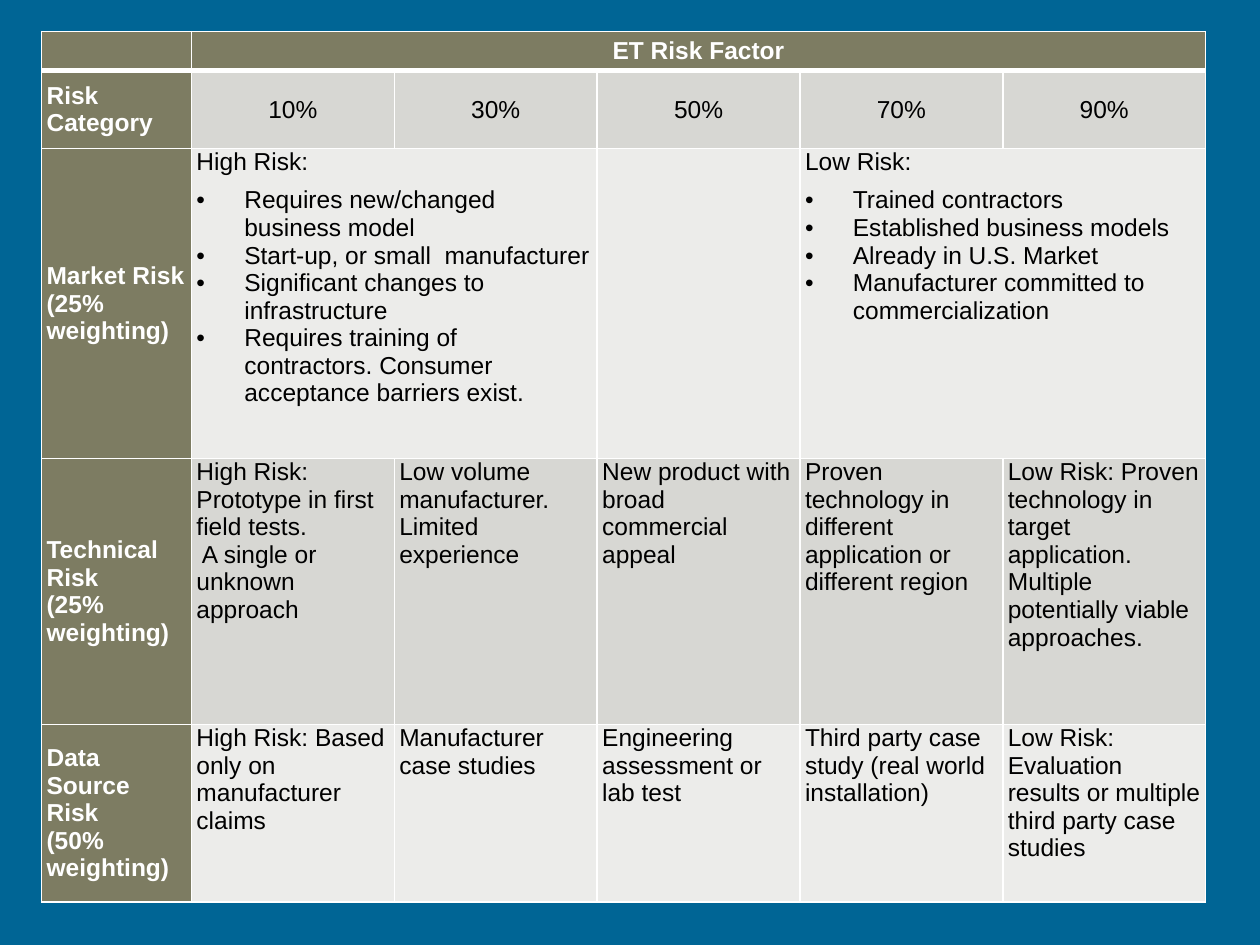
"""Build a slide with a table of emerging technology risk factors."""
from lxml.etree import SubElement
from pptx import Presentation
from pptx.dml.color import RGBColor
from pptx.enum.text import MSO_ANCHOR as Anchor, PP_ALIGN as Align
from pptx.oxml.ns import qn
from pptx.util import Inches, Pt

COLORS = {"background": "006595", "header": "7D7C62", "dark band": "D7D7D3",
          "light band": "ECECEA", "white": "FFFFFF", "black": "000000"}
COLUMN_WIDTHS = [1.19] + [1.61] * 5
ROW_HEIGHTS = [0.31, 0.62, 2.46, 2.11, 1.41]
MERGES = [(0, 1, 5), (2, 1, 2), (2, 4, 5)]
MARGINS = {"margin_left": Inches(0.04), "margin_right": Inches(0.04),
           "margin_top": 0, "margin_bottom": 0}
BULLET = "• "

ROWS = [
    ["", "ET Risk Factor", "", "", "", ""],
    ["Risk Category", "10%", "30%", "50%", "70%", "90%"],
    ["Market Risk\n(25% weighting)",
     "High Risk:\n• Requires new/changed business model\n"
     "• Start-up, or small  manufacturer\n"
     "• Significant changes to infrastructure\n"
     "• Requires training of contractors. Consumer acceptance barriers exist.",
     "", "",
     "Low Risk:\n• Trained contractors\n• Established business models\n"
     "• Already in U.S. Market\n• Manufacturer committed to commercialization",
     ""],
    ["Technical Risk\n(25% weighting)",
     "High Risk: Prototype in first field tests.\n A single or unknown approach",
     "Low volume manufacturer.\nLimited experience",
     "New product with broad commercial appeal",
     "Proven technology in different application or different region",
     "Low Risk: Proven technology in target application. "
     "Multiple potentially viable approaches."],
    ["Data Source Risk\n(50% weighting)",
     "High Risk: Based only on manufacturer claims",
     "Manufacturer case studies",
     "Engineering assessment or lab test",
     "Third party case study (real world installation)",
     "Low Risk: Evaluation results or multiple third party case studies"],
]


def add_borders(cell, bottom_width):
    properties = cell._tc.get_or_add_tcPr()
    for side, width in {"L": 1, "R": 1, "T": 1, "B": bottom_width}.items():
        line = SubElement(properties, qn(f"a:ln{side}"), w=str(Pt(width)))
        fill = SubElement(line, qn("a:solidFill"))
        SubElement(fill, qn("a:srgbClr"), val=COLORS["white"])


def add_bullet(paragraph):
    properties = paragraph._p.get_or_add_pPr()
    properties.set("marL", str(Inches(0.38)))
    properties.set("indent", str(-Inches(0.38)))
    SubElement(properties, qn("a:buFont"), typeface="Arial")
    SubElement(properties, qn("a:buChar"), char=BULLET.strip())


presentation = Presentation()
presentation.slide_width, presentation.slide_height = Inches(10), Inches(7.5)
slide = presentation.slides.add_slide(presentation.slide_layouts[6])
slide.background.fill.solid()
slide.background.fill.fore_color.rgb = RGBColor.from_string(COLORS["background"])

table = slide.shapes.add_table(
    len(ROW_HEIGHTS), len(COLUMN_WIDTHS), Inches(0.33), Inches(0.25),
    Inches(sum(COLUMN_WIDTHS)), Inches(sum(ROW_HEIGHTS))).table
for column, width in zip(table.columns, COLUMN_WIDTHS):
    column.width = Inches(width)
for row, height in zip(table.rows, ROW_HEIGHTS):
    row.height = Inches(height)
for row_index, first, last in MERGES:
    table.cell(row_index, first).merge(table.cell(row_index, last))

for row_index, row_texts in enumerate(ROWS):
    band = "dark band" if row_index % 2 else "light band"
    for column_index, text in enumerate(row_texts):
        cell = table.cell(row_index, column_index)
        is_header = row_index == 0 or column_index == 0
        is_centered = row_index < 2 and column_index > 0
        add_borders(cell, 3 if row_index == 0 else 1)
        cell.fill.solid()
        cell.fill.fore_color.rgb = RGBColor.from_string(
            COLORS["header" if is_header else band])
        for name, value in MARGINS.items():
            setattr(cell, name, value)
        cell.vertical_anchor = Anchor.MIDDLE if is_header or is_centered else Anchor.TOP
        if not text:
            continue
        font_format = {"name": "Arial", "size": Pt(14), "bold": is_header}
        font_color = COLORS["white" if is_header else "black"]
        for line_index, line in enumerate(text.split("\n")):
            frame = cell.text_frame
            paragraph = frame.add_paragraph() if line_index else frame.paragraphs[0]
            paragraph.alignment = Align.CENTER if is_centered else Align.LEFT
            if line.startswith(BULLET):
                add_bullet(paragraph)
                paragraph.space_before = Pt(6 if line_index == 1 else 0)
            run = paragraph.add_run()
            run.text = line.removeprefix(BULLET)
            for name, value in font_format.items():
                setattr(run.font, name, value)
            run.font.color.rgb = RGBColor.from_string(font_color)

presentation.save("out.pptx")
